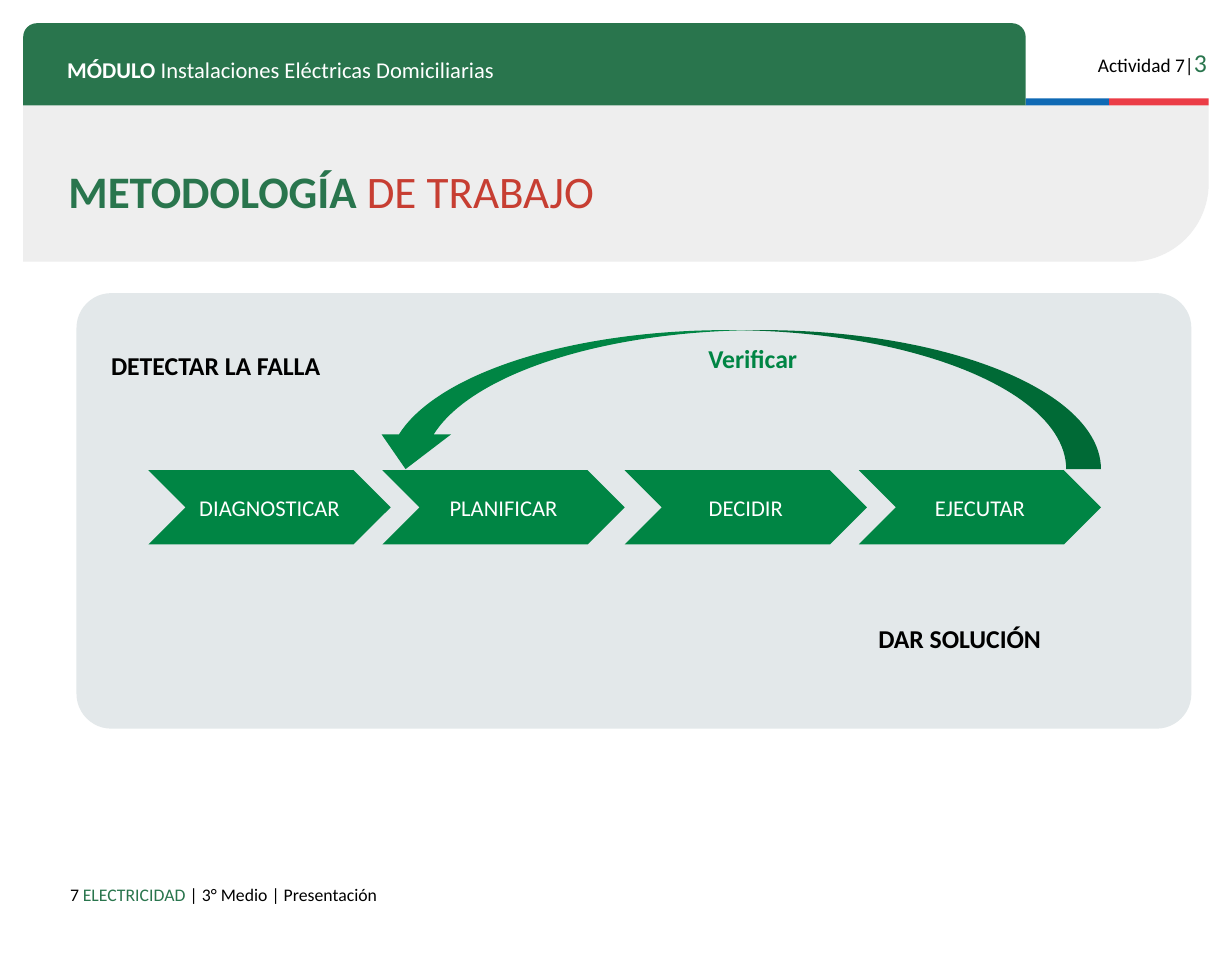
from pptx import Presentation
from pptx.dml.color import RGBColor
from pptx.enum.shapes import MSO_SHAPE as Shape
from pptx.enum.text import MSO_ANCHOR as Anchor, MSO_AUTO_SIZE as AutoSize, PP_ALIGN as Align
from pptx.util import Pt

COLORS = {
    "green": "29754D", "step": "008544", "blue": "0F69B4", "red": "EB3C46",
    "brick": "C73E32", "band": "EEEEEE", "panel": "E3E8EA",
    "black": "000000", "white": "FFFFFF",
}


class Deck:
    """Holds the style and the current slide."""
    font = "Calibri"

    def __init__(self, width, height):
        self.file = Presentation()
        self.file.slide_width, self.file.slide_height = Pt(width), Pt(height)
        self.slide = self.file.slides.add_slide(self.file.slide_layouts[5])

    def color(self, name):
        return RGBColor.from_string(COLORS[name])

    def fill_text(self, frame, parts, align=Align.LEFT, anchor=Anchor.TOP, pad=7.2):
        """Each part is (text, size, colour, bold)."""
        frame.word_wrap = True
        frame.auto_size = AutoSize.NONE
        frame.vertical_anchor = anchor
        frame.margin_left = frame.margin_right = Pt(7.2)
        frame.margin_top = frame.margin_bottom = Pt(pad)
        line = frame.paragraphs[0]
        line.alignment = align
        for text, size, color, bold in parts:
            run = line.add_run()
            run.text = text
            run.font.name, run.font.size, run.font.bold = self.font, Pt(size), bold
            run.font.color.rgb = self.color(color)

    def shape(self, kind, box, fill, adjustments=(), flip=None):
        shape = self.slide.shapes.add_shape(kind, *map(Pt, box))
        shape.shadow.inherit = False
        shape.fill.solid()
        shape.fill.fore_color.rgb = self.color(fill)
        shape.line.fill.background()
        for index, value in enumerate(adjustments):
            shape.adjustments[index] = value
        if flip:
            shape.element.spPr.get_or_add_xfrm().set(flip, "1")
        return shape

    def text(self, box, parts, **layout):
        label = self.slide.shapes.add_textbox(*map(Pt, box))
        self.fill_text(label.text_frame, parts, **layout)

    def title(self, box, parts):
        title = self.slide.shapes.title
        title.left, title.top, title.width, title.height = map(Pt, box)
        self.fill_text(title.text_frame, parts, anchor=Anchor.MIDDLE)
        title.text_frame.paragraphs[0].line_spacing = 0.8
        title.element.getparent().append(title.element)  # bring above the band


def main():
    deck = Deck(765.36, 595.44)

    # Header
    deck.shape(Shape.ROUND_1_RECTANGLE, (14.4, 65.5, 736.5, 97.2), "band", [0.5], flip="flipV")
    deck.shape(Shape.RECTANGLE, (637.2, 61.2, 51.8, 4.3), "blue")
    deck.shape(Shape.RECTANGLE, (689, 61.2, 61.9, 4.3), "red")
    deck.shape(Shape.ROUND_2_SAME_RECTANGLE, (14.4, 14.4, 622.8, 51.1), "green", [0.167, 0])
    deck.text((34.6, 27.4, 586, 25.2), [
        ("MÓDULO", 14, "white", True),
        (" Instalaciones Eléctricas Domiciliarias", 14, "white", False)])
    deck.text((664.6, 21.6, 92.2, 27.4), [
        ("Actividad 7|", 12, "black", False), ("3", 16, "green", False)], align=Align.RIGHT)
    deck.title((35.3, 108.7, 704.9, 25.2), [
        ("METODOLOGÍA ", 28, "green", True), ("DE TRABAJO", 28, "brick", False)])

    # Process panel
    deck.shape(Shape.ROUNDED_RECTANGLE, (47.5, 182.2, 692.6, 270.7), "panel", [0.08])
    for caption, box in [("DETECTAR LA FALLA", (61.9, 213.8, 169.2, 26.6)),
                         ("DAR SOLUCIÓN", (538.6, 383.8, 146.2, 26.6))]:
        deck.text(box, [(caption, 16, "black", True)], pad=3.6)

    # Steps
    for name, left in [("DIAGNOSTICAR", 92.2), ("PLANIFICAR", 237.6),
                       ("DECIDIR", 388.1), ("EJECUTAR", 533.5)]:
        step = deck.shape(Shape.CHEVRON, (left, 292.3, 150.5, 46.1), "step", [0.5])
        deck.fill_text(step.text_frame, [(name, 14, "white", False)],
                       align=Align.CENTER, anchor=Anchor.MIDDLE, pad=3.6)

    # Feedback arrow
    deck.shape(Shape.CURVED_DOWN_ARROW, (230.4, 205.2, 453.6, 86.4), "step",
               [0.25, 0.5, 0.25], flip="flipH")
    deck.text((422.6, 209.5, 90, 26.6), [("Verificar", 16, "step", True)],
              align=Align.CENTER, pad=3.6)

    # Footer
    deck.text((14.4, 542.2, 41.8, 20.9), [("7", 11, "black", False)], align=Align.RIGHT)
    deck.text((44.4, 542.2, 520, 27.4), [
        ("ELECTRICIDAD ", 11, "green", False),
        ("| 3° Medio | Presentación", 11, "black", False)])

    deck.file.save("out.pptx")


if __name__ == "__main__":
    main()
